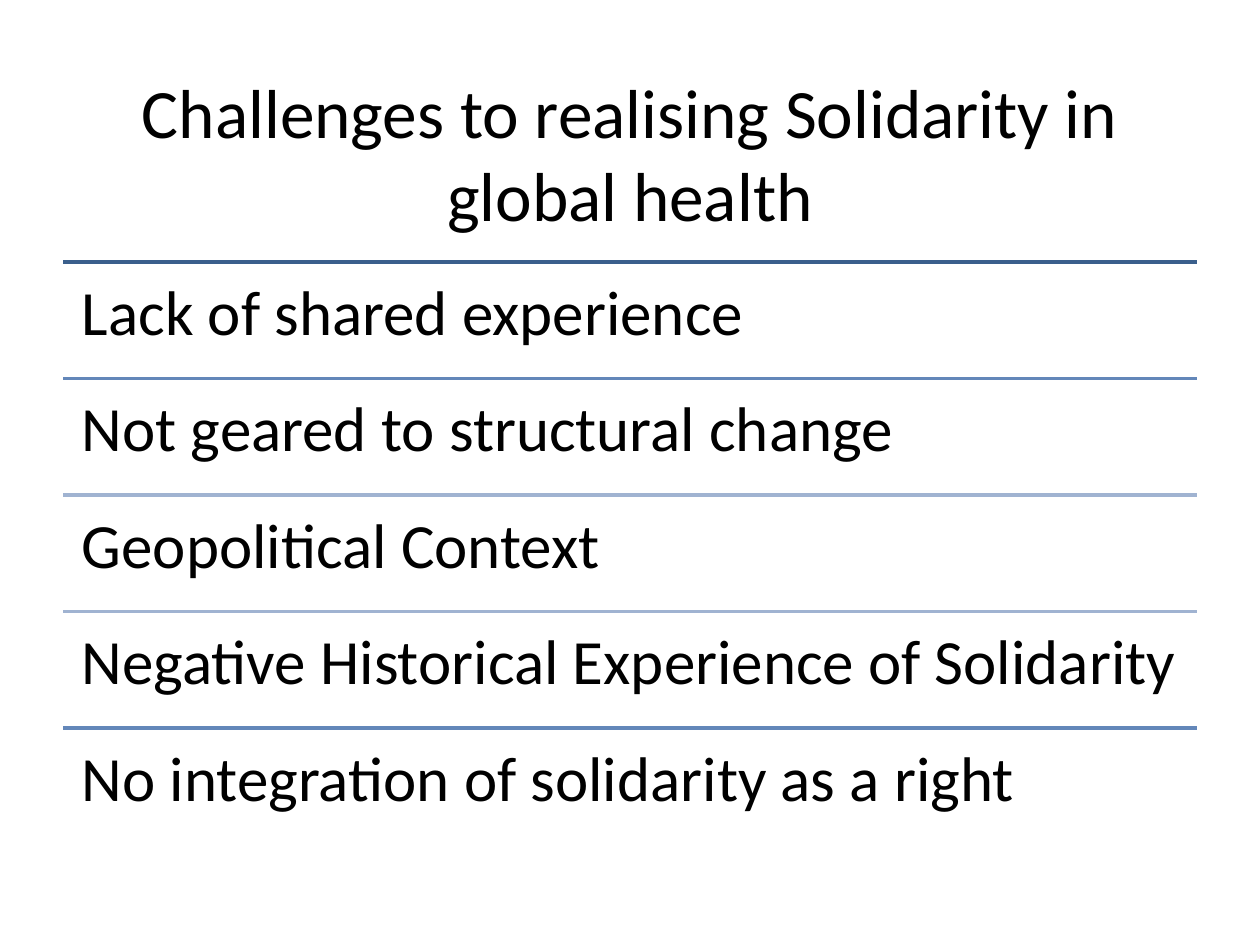
"""Build a slide listing the challenges to realising solidarity in global health."""
from pptx import Presentation
from pptx import util as u
from pptx.dml.color import RGBColor
from pptx.enum import shapes, text
from pptx.oxml import xmlchemy

BLACK = RGBColor(0x00, 0x00, 0x00)
DARK = RGBColor(0x3A, 0x5F, 0x8C)
MEDIUM = RGBColor(0x63, 0x87, 0xB9)
LIGHT = RGBColor(0xA0, 0xB3, 0xD1)

LEFT, WIDTH = 0.5, 9
LIST_TOP, LIST_HEIGHT = 2.08, 4.62
CHALLENGES = [
    ("Lack of shared experience", DARK),
    ("Not geared to structural change", MEDIUM),
    ("Geopolitical Context", LIGHT),
    ("Negative Historical Experience of Solidarity", LIGHT),
    ("No integration of solidarity as a right", MEDIUM),
]


class Deck:
    """Hold the text style and the current slide."""

    def __init__(self, slide, font="Calibri", color=BLACK):
        self.s = slide
        self.font = font
        self.color = color

    def text(self, content, top, height, size, inset=None, anchor=text.MSO_ANCHOR.TOP):
        """Add a full-width text box and return its paragraph."""
        sp = self.s.shapes.add_textbox(*map(u.Inches, (LEFT, top, WIDTH, height)))
        tf = sp.text_frame
        tf.word_wrap = True
        tf.vertical_anchor = anchor
        if inset is not None:
            tf.margin_left = tf.margin_right = u.Inches(inset)
            tf.margin_top = tf.margin_bottom = u.Inches(inset)
        p = tf.paragraphs[0]
        p.text = content
        p.font.name = self.font
        p.font.size = u.Pt(size)
        p.font.color.rgb = self.color
        return p

    def title(self, content, top, height):
        """Add the centred slide title."""
        p = self.text(content, top, height, 39.6, anchor=text.MSO_ANCHOR.MIDDLE)
        p.alignment = text.PP_ALIGN.CENTER

    def rule(self, top, color):
        """Add a full-width horizontal line."""
        ends = map(u.Inches, (LEFT, top, LEFT + WIDTH, top))
        sp = self.s.shapes.add_connector(shapes.MSO_CONNECTOR.STRAIGHT, *ends)
        sp.line.color.rgb = color
        sp.line.width = u.Pt(2)
        sp._element.spPr.append(xmlchemy.OxmlElement("a:effectLst"))

    def row(self, content, top, height, color):
        """Add a list entry below its line."""
        self.rule(top, color)
        p = self.text(content, top, height, 36, inset=0.15)
        p.line_spacing = 0.9


def main():
    prs = Presentation()
    prs.slide_width, prs.slide_height = u.Inches(10), u.Inches(7.5)
    deck = Deck(prs.slides.add_slide(prs.slide_layouts[6]))
    deck.title("Challenges to realising Solidarity in global health", 0.58, 1.25)
    height = LIST_HEIGHT / len(CHALLENGES)
    for i, (content, color) in enumerate(CHALLENGES):
        deck.row(content, LIST_TOP + i * height, height, color)
    prs.save("out.pptx")


if __name__ == "__main__":
    main()
